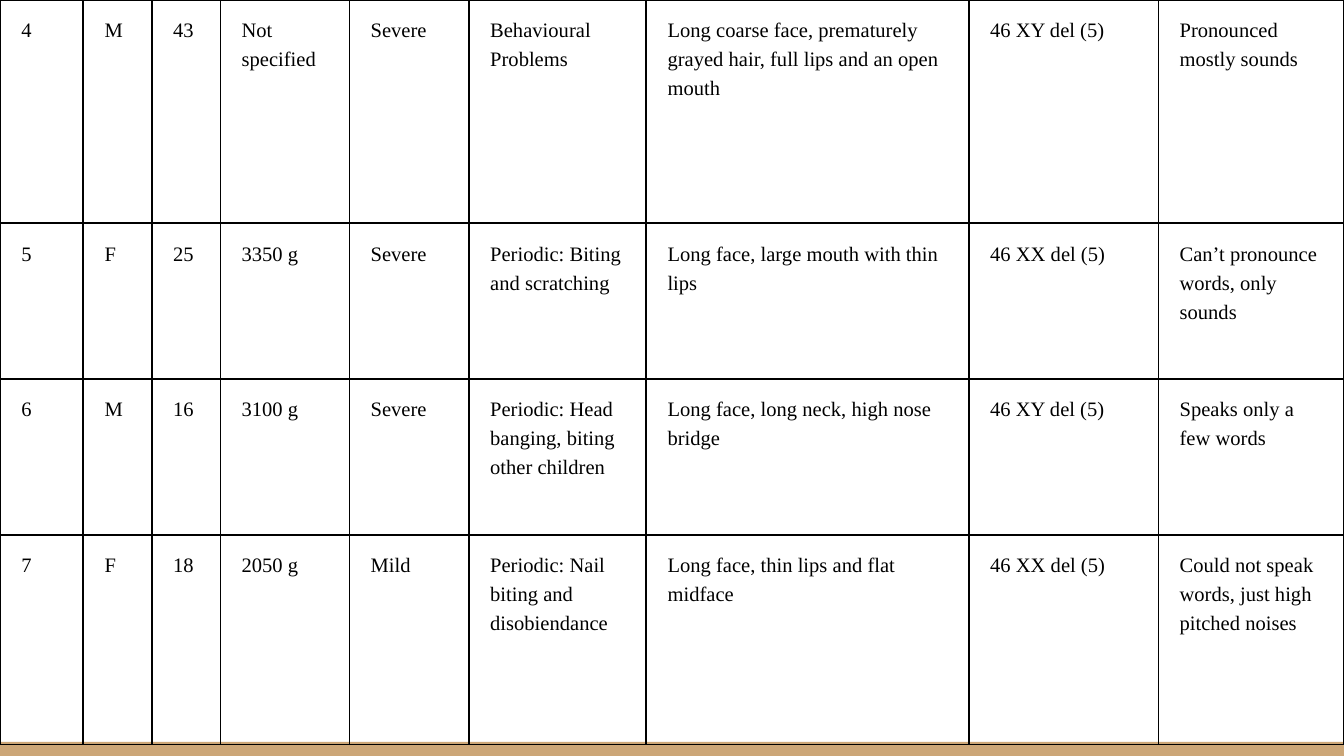
from lxml import etree
from pptx import Presentation
from pptx import util as u
from pptx.dml.color import RGBColor
from pptx.enum import shapes
from pptx.oxml import ns

COLUMNS = [0.62, 0.51, 0.51, 0.96, 0.89, 1.32, 2.4, 1.41, 1.38]
HEIGHTS = [1.66, 1.16, 1.16, 1.56]
PATIENTS = [
    ["4", "M", "43", "Not specified", "Severe", "Behavioural Problems",
     "Long coarse face, prematurely grayed hair, full lips and an open mouth",
     "46 XY del (5)", "Pronounced mostly sounds"],
    ["5", "F", "25", "3350 g", "Severe", "Periodic: Biting and scratching",
     "Long face, large mouth with thin lips",
     "46 XX del (5)", "Can’t pronounce words, only sounds"],
    ["6", "M", "16", "3100 g", "Severe",
     "Periodic: Head banging, biting other children",
     "Long face, long neck, high nose bridge",
     "46 XY del (5)", "Speaks only a few words"],
    ["7", "F", "18", "2050 g", "Mild",
     "Periodic: Nail biting and disobiendance",
     "Long face, thin lips and flat midface",
     "46 XX del (5)", "Could not speak words, just high pitched noises"],
]


def color(value):
    return RGBColor.from_string(value)


def write(tf, text, size=11, font="Times New Roman", fill="000000",
          indent=6, spacing=1.27, after=12):
    """Fill a text frame; indent is in points and applies to both sides."""
    tf.word_wrap = True
    p = tf.paragraphs[0]
    p.line_spacing = spacing
    p.space_after = u.Pt(after)
    pPr = p._p.get_or_add_pPr()
    for side in ("marL", "marR"):
        pPr.set(side, str(u.Pt(indent)))
    pPr.set("indent", "0")
    r = p.add_run()
    r.text = text
    r.font.size = u.Pt(size)
    r.font.name = font
    r.font.color.rgb = color(fill)


def set_borders(cell, value, width):
    tcPr = cell._tc.get_or_add_tcPr()
    for i, side in enumerate(("lnL", "lnR", "lnT", "lnB")):
        ln = etree.Element(ns.qn(f"a:{side}"), w=str(u.Pt(width)))
        fill = etree.SubElement(ln, ns.qn("a:solidFill"))
        etree.SubElement(fill, ns.qn("a:srgbClr"), val=value)
        tcPr.insert(i, ln)  # borders must come before the cell fill


class Deck:
    """Holds the style and the current slide."""

    band = "CCA677"
    border = "000000"

    def __init__(self, prs):
        self.s = prs.slides.add_slide(prs.slide_layouts[6])

    def bar(self, x, y, w, h):
        sp = self.s.shapes.add_shape(
            shapes.MSO_SHAPE.RECTANGLE, *map(u.Inches, (x, y, w, h)))
        sp.shadow.inherit = False
        sp.fill.solid()
        sp.fill.fore_color.rgb = color(self.band)
        sp.line.fill.background()

    def table(self, x, y, widths, heights, rows):
        frame = self.s.shapes.add_table(
            len(heights), len(widths),
            *map(u.Inches, (x, y, sum(widths), sum(heights))))
        table = frame.table
        table.first_row = table.horz_banding = False
        for column, width in zip(table.columns, widths):
            column.width = u.Inches(width)
        for row, height, texts in zip(table.rows, heights, rows):
            row.height = u.Inches(height)
            for cell, text in zip(row.cells, texts):
                cell.margin_left = cell.margin_right = u.Pt(5.4)
                cell.margin_top = cell.margin_bottom = u.Inches(0.1)
                cell.fill.background()
                set_borders(cell, self.border, 1)
                write(cell.text_frame, text)


def main():
    prs = Presentation()
    prs.slide_width = u.Inches(10)
    prs.slide_height = u.Inches(10 * 9 / 16)
    deck = Deck(prs)
    deck.bar(0, 5.52, 10, 0.11)
    deck.table(0, 0, COLUMNS, HEIGHTS, PATIENTS)
    prs.save("out.pptx")


if __name__ == "__main__":
    main()
